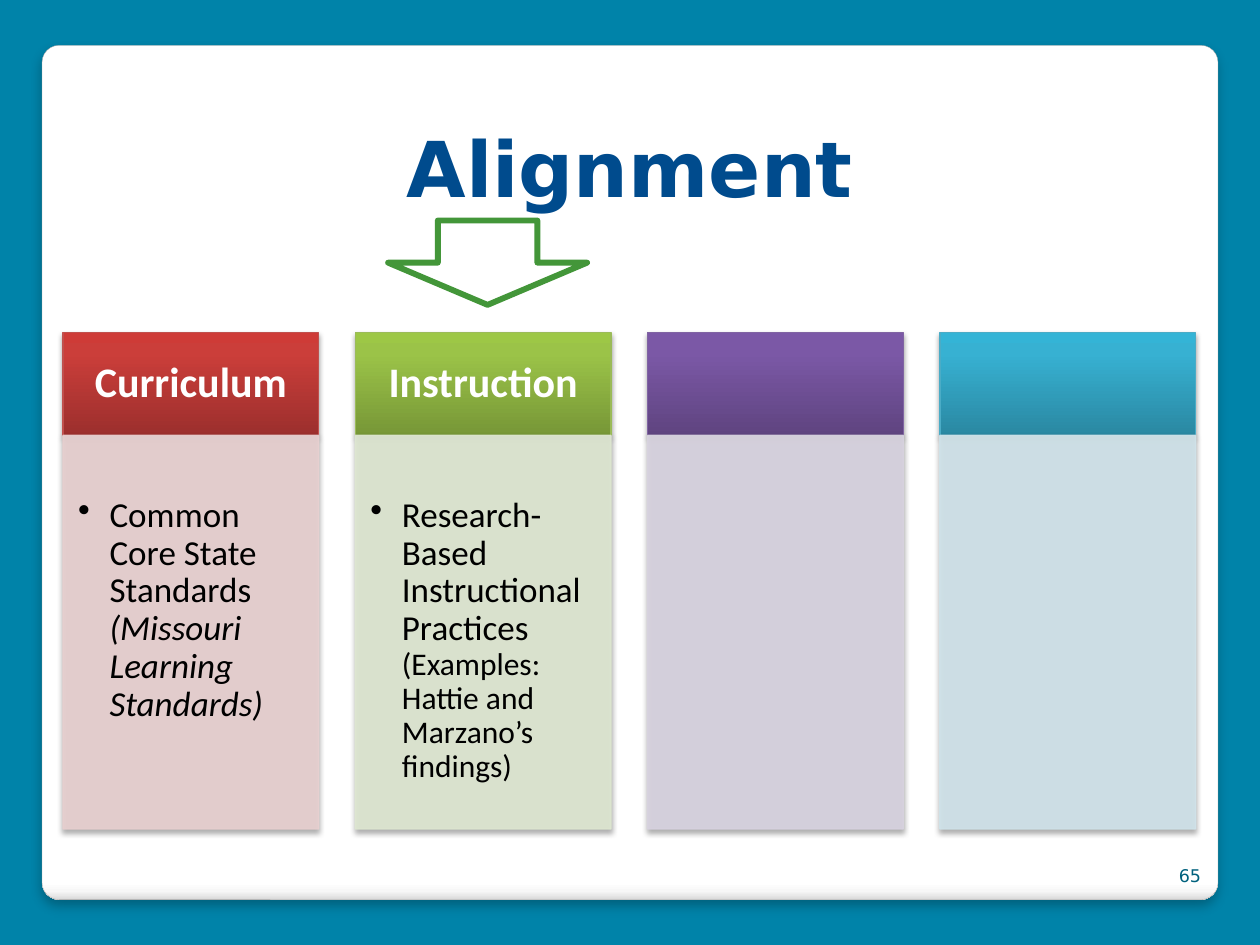
from lxml import etree
from pptx import Presentation
from pptx import util as u
from pptx.dml.color import RGBColor
from pptx.enum import shapes, text
from pptx.oxml import ns, parse_xml

TEAL = RGBColor(0x00, 0x83, 0xA9)
DARK_TEAL = RGBColor(0x00, 0x61, 0x7D)
NAVY = RGBColor(0x00, 0x4B, 0x8D)
GREEN = RGBColor(0x43, 0x96, 0x39)
GREY = RGBColor(0xA4, 0xA4, 0xA4)
WHITE = RGBColor(0xFF, 0xFF, 0xFF)
BLACK = RGBColor(0, 0, 0)
PANEL_STOPS = [(0, "FFFFFF"), (98, "FFFFFF"), (99, "F7F7F7"), (100, "DADADA")]

WIDTH, HEIGHT = 10, 7.5
COLUMN_WIDTH, COLUMN_STEP = 2.03, 2.32
HEADER_SHARE = 0.207

COLUMNS = [
    ("Curriculum", [("Common Core State Standards ", {}),
                    ("(Missouri Learning Standards)", {"italic": True})],
     ("9C2F2D", "CB3E3A", "CE3B37"), "C0504D", "E8D0D0"),
    ("Instruction", [("Research-Based Instructional Practices", {"line_break": True}),
                     ("(Examples: Hattie and Marzano’s findings)", {"size": 18})],
     ("779737", "9BC348", "9DC746"), "9BBB59", "DEE7D1"),
    ("", [], ("5F4480", "7B58A6", "7C57A8"), "8064A2", "D8D3E0"),
    ("", [], ("2A88A2", "37B1D2", "34B4D6"), "4BACC6", "D0E3EA"),
]


def inches(box):
    return [u.Inches(length) for length in box]


def add_run(paragraph, content, size=20, font="Calibri", color=BLACK, bold=False,
            italic=False, line_break=False):
    run = paragraph.add_run()
    run.text = content
    run.font.size = u.Pt(size)
    run.font.name = font
    run.font.color.rgb = color
    run.font.bold = bold
    run.font.italic = italic
    if line_break:
        paragraph.add_line_break()


def add_box(slide, preset, box, fill, line, line_width):
    shape = slide.shapes.add_shape(preset, *inches(box))
    shape.shadow.inherit = False
    shape.fill.solid()
    shape.fill.fore_color.rgb = fill
    shape.line.color.rgb = line
    shape.line.width = u.Pt(line_width)
    return shape


def set_gradient(shape, stops, angle):
    marks = "".join(f'<a:gs pos="{position * 1000}"><a:srgbClr val="{color}"/></a:gs>'
                    for position, color in stops)
    gradient = parse_xml(f'<a:gradFill {ns.nsdecls("a")} rotWithShape="1"><a:gsLst>{marks}'
                         f'</a:gsLst><a:lin ang="{angle * 60000}" scaled="0"/></a:gradFill>')
    properties = shape._element.spPr
    properties.replace(properties.find(ns.qn("a:solidFill")), gradient)


def set_shadow(shape, opacity, blur, distance):
    effects = shape._element.spPr.find(ns.qn("a:effectLst"))
    effects.append(parse_xml(
        f'<a:outerShdw {ns.nsdecls("a")} blurRad="{u.Pt(blur)}" dist="{u.Pt(distance)}" '
        f'dir="5400000" rotWithShape="0"><a:srgbClr val="000000">'
        f'<a:alpha val="{opacity * 1000}"/></a:srgbClr></a:outerShdw>'))


def set_opacity(shape, opacity):
    for color in shape._element.spPr.iter(ns.qn("a:srgbClr")):
        etree.SubElement(color, ns.qn("a:alpha"), val=str(opacity * 1000))


def set_frame(shape, anchor, margins):
    frame = shape.text_frame
    frame.word_wrap = True
    frame.vertical_anchor = anchor
    (frame.margin_left, frame.margin_top,
     frame.margin_right, frame.margin_bottom) = inches(margins)
    return frame.paragraphs[0]


def add_bullet(paragraph):
    properties = paragraph._p.get_or_add_pPr()
    properties.set("marL", str(u.Inches(0.25)))
    properties.set("indent", str(-u.Inches(0.25)))
    etree.SubElement(properties, ns.qn("a:buChar"), char="•")


def add_panel(slide, box):
    panel = add_box(slide, shapes.MSO_SHAPE.ROUNDED_RECTANGLE, box, WHITE, GREY, 0.16)
    panel.adjustments[0] = 0.02
    set_gradient(panel, PANEL_STOPS, 90)
    set_shadow(panel, 25, 6, 4)


def add_title(slide, box, content):
    title = slide.shapes.title
    title.left, title.top, title.width, title.height = inches(box)
    paragraph = set_frame(title, text.MSO_ANCHOR.MIDDLE, (0.1, 0.05, 0.1, 0.05))
    paragraph.alignment = text.PP_ALIGN.CENTER
    add_run(paragraph, content, size=44, font="DejaVu Sans", color=NAVY, bold=True)


def add_column(slide, box, heading, details, shades, edge, tint):
    left, top, width, height = box
    header_height = height * HEADER_SHARE
    header = add_box(slide, shapes.MSO_SHAPE.RECTANGLE, (left, top, width, header_height),
                     WHITE, RGBColor.from_string(edge), 0.75)
    set_gradient(header, zip((0, 80, 100), shades), 270)
    set_shadow(header, 35, 3.1, 1.8)

    tint_color = RGBColor.from_string(tint)
    body = add_box(slide, shapes.MSO_SHAPE.RECTANGLE,
                   (left, top + header_height, width, height - header_height),
                   tint_color, tint_color, 0.75)
    set_opacity(body, 90)
    set_shadow(body, 35, 3.1, 1.8)

    if heading:
        paragraph = set_frame(header, text.MSO_ANCHOR.MIDDLE, (0.19, 0.11, 0.19, 0.11))
        paragraph.alignment = text.PP_ALIGN.CENTER
        paragraph.line_spacing = 0.9
        add_run(paragraph, heading, size=24, color=WHITE, bold=True)
    if details:
        paragraph = set_frame(body, text.MSO_ANCHOR.TOP, (0.12, 0.49, 0.16, 0.17))
        paragraph.alignment = text.PP_ALIGN.LEFT
        paragraph.line_spacing = 0.9
        add_bullet(paragraph)
        for content, style in details:
            add_run(paragraph, content, **style)


def add_columns(slide, box):
    left, top, _, height = box
    for index, column in enumerate(COLUMNS):
        add_column(slide, (left + index * COLUMN_STEP, top, COLUMN_WIDTH, height), *column)


def add_arrow(slide, box):
    arrow = add_box(slide, shapes.MSO_SHAPE.DOWN_ARROW, box, WHITE, GREEN, 3.35)
    etree.SubElement(arrow.line._get_or_add_ln(), ns.qn("a:round"))


def add_page_number(slide, box, content):
    number = slide.shapes.add_textbox(*inches(box))
    paragraph = set_frame(number, text.MSO_ANCHOR.BOTTOM, (0.1, 0.05, 0.1, 0.05))
    paragraph.alignment = text.PP_ALIGN.RIGHT
    add_run(paragraph, content, size=10, font="DejaVu Sans", color=DARK_TEAL)


def main():
    presentation = Presentation()
    presentation.slide_width, presentation.slide_height = inches((WIDTH, HEIGHT))
    slide = presentation.slides.add_slide(presentation.slide_layouts[5])
    slide.background.fill.solid()
    slide.background.fill.fore_color.rgb = TEAL

    add_panel(slide, (WIDTH / 30, 0.36, WIDTH * 14 / 15, 6.78))
    slide.shapes._spTree.append(slide.shapes.title._element)
    add_title(slide, (WIDTH / 15, HEIGHT * 0.1, WIDTH * 13 / 15, 1.15), "Alignment")
    add_page_number(slide, (9.13, 6.68, 0.5, 0.4), "65")
    add_columns(slide, (WIDTH * 0.05, 2.64, WIDTH * 0.9, 3.94))
    add_arrow(slide, (3.08, 1.75, 1.58, 0.67))
    presentation.save("out.pptx")


if __name__ == "__main__":
    main()
